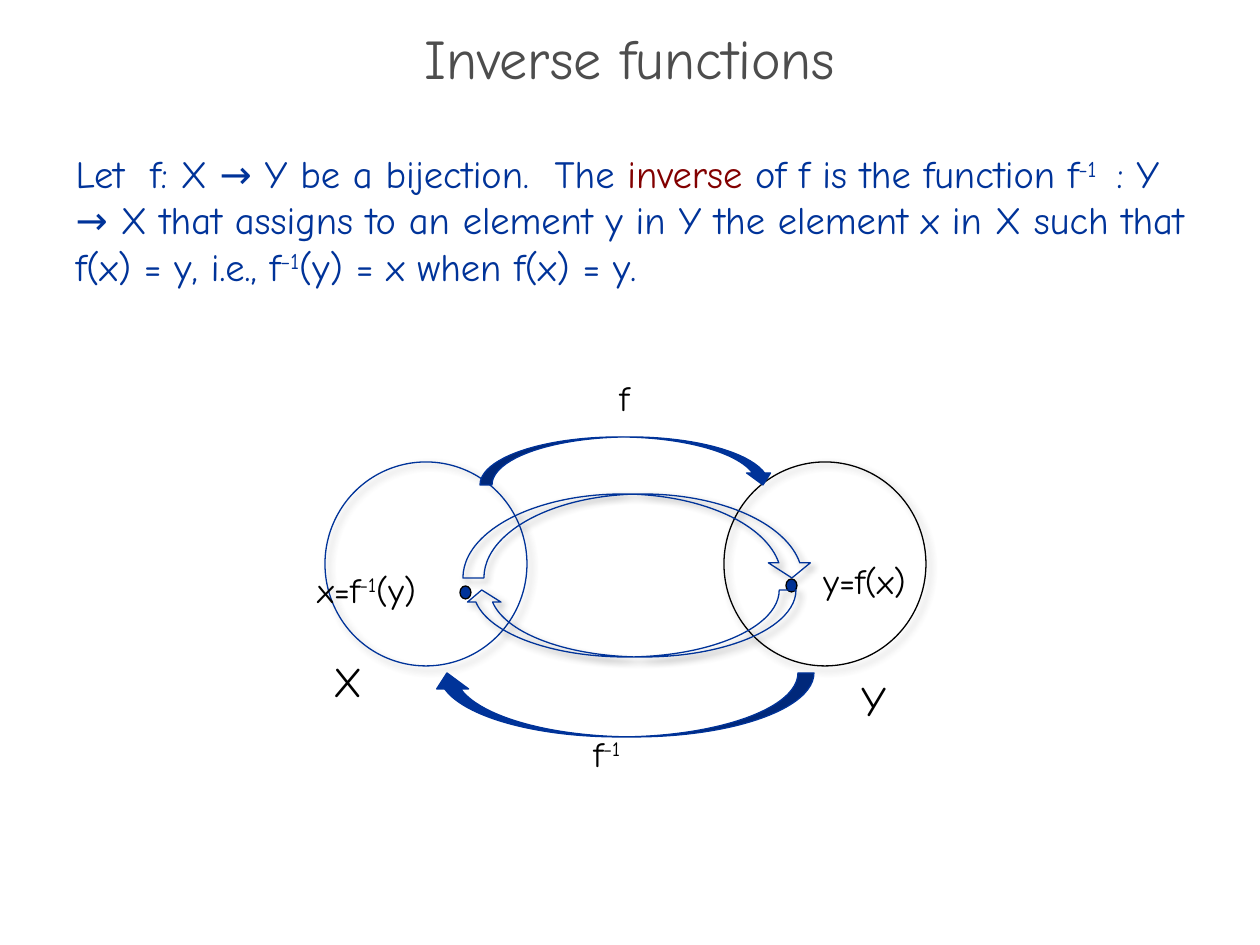
from lxml import etree
from pptx import Presentation
from pptx.dml.color import RGBColor
from pptx.enum.shapes import MSO_SHAPE
from pptx.enum.text import MSO_ANCHOR, MSO_AUTO_SIZE, PP_ALIGN
from pptx.oxml import parse_xml
from pptx.oxml.ns import nsdecls, qn
from pptx.util import Emu, Pt

ELLIPSE = MSO_SHAPE.OVAL
ARC = MSO_SHAPE.CURVED_DOWN_ARROW
SCALE = 914400 / 126  # EMU per px
FONT = "Comic Neue"
COLORS = {"blue": "003399", "red": "820000", "grey": "4D4D4D",
          "black": "000000", "shade": "4C4C4C"}

# Content: runs are (text, color, superscript)
TITLE = [("Inverse functions", "grey", False)]
DEFINITION = [
    ("Let  f: X → Y be a bijection.  The ", "blue", False),
    ("inverse", "red", False),
    (" of f is the function f", "blue", False),
    ("-1 ", "blue", True),
    (" : Y → X that assigns to an element y in Y the element x in X "
     "such that f(x) = y, i.e., f", "blue", False),
    ("−1", "blue", True),
    ("(y) = x when f(x) = y.", "blue", False),
]
TITLE_BOX = (0, 34, 1260, 63)
DEFINITION_BOX = (63, 144, 1134, 624)

# Shapes: kind, box, fill, line, shadow, flipped, adjustments
SETS = [
    (ELLIPSE, (325, 462, 202, 204), None, "blue", "shade", False, ()),
    (ELLIPSE, (724, 462, 202, 204), None, "black", "shade", False, ()),
]
ELEMENTS = [
    (ELLIPSE, (786, 579, 11, 13), "blue", "black", None, False, ()),
    (ELLIPSE, (460, 586, 11, 13), "blue", "black", None, False, ()),
]
SET_MAPS = [
    (ARC, (480, 437, 295, 48), "blue", "blue", None, False, ()),
    (ARC, (431, 673, 383, 64), "blue", "blue", None, True, ()),
]
ELEMENT_MAPS = [
    (ARC, (463, 494, 350, 84), None, "blue", "black", False, (0.25, 0.5, 0.18)),
    (ARC, (465, 590, 331, 67), None, "blue", "black", True, (0.25, 0.5, 0.18)),
]

# Labels: box, size, runs
LABELS = [
    ((321, 649, 57, 63), 24, [("X", "black", False)]),
    ((849, 668, 53, 63), 24, [("Y", "black", False)]),
    ((607, 370, 43, 55), 20, [("f", "black", False)]),
    ((581, 726, 66, 55), 20, [("f", "black", False), ("−1", "black", True)]),
    ((305, 562, 147, 55), 20, [("x=f", "black", False), ("-1", "black", True),
                               ("(y)", "black", False)]),
    ((811, 553, 126, 55), 20, [("y=f(x)", "black", False)]),
]


def rgb(name):
    return RGBColor.from_string(COLORS[name])


def emu(box):
    return [Emu(round(px * SCALE)) for px in box]


def write(paragraph, runs, size):
    for text, color, superscript in runs:
        run = paragraph.add_run()
        run.text = text
        run.font.name = FONT
        run.font.size = Pt(size)
        run.font.color.rgb = rgb(color)
        if superscript:
            run.font._element.set("baseline", "30000")


def fill_placeholder(holder, box, runs, size):
    holder.left, holder.top, holder.width, holder.height = emu(box)
    frame = holder.text_frame
    frame.auto_size = MSO_AUTO_SIZE.NONE
    write(frame.paragraphs[0], runs, size)
    return frame


def add_shadow(shape, color):
    effects = parse_xml(
        f'<a:effectLst {nsdecls("a")}>'
        f'<a:outerShdw blurRad="{Pt(4)}" dist="{Pt(3)}" dir="2700000" rotWithShape="0">'
        f'<a:srgbClr val="{COLORS[color]}"><a:alpha val="43000"/></a:srgbClr>'
        '</a:outerShdw></a:effectLst>')
    properties = shape._element.spPr
    properties.replace(properties.find(qn("a:effectLst")), effects)


def draw(slide, kind, box, fill, line, shadow, flipped, adjustments):
    shape = slide.shapes.add_shape(kind, *emu(box))
    shape.line.color.rgb = rgb(line)
    shape.line.width = Pt(0.75)
    if fill:
        shape.fill.solid()
        shape.fill.fore_color.rgb = rgb(fill)
    else:
        shape.fill.background()
    shape.shadow.inherit = False
    if shadow:
        add_shadow(shape, shadow)
    if flipped:
        shape._element.spPr.xfrm.set("flipH", "1")
        shape._element.spPr.xfrm.set("flipV", "1")
    for index, value in enumerate(adjustments):
        shape.adjustments[index] = value


def main():
    deck = Presentation()
    deck.slide_width, deck.slide_height = emu((1260, 945))
    slide = deck.slides.add_slide(deck.slide_layouts[1])

    # Title
    heading = fill_placeholder(slide.shapes.title, TITLE_BOX, TITLE, 32)
    heading.vertical_anchor = MSO_ANCHOR.MIDDLE
    heading.paragraphs[0].alignment = PP_ALIGN.CENTER
    heading.paragraphs[0].line_spacing = 0.7

    # Definition, without a bullet
    body = fill_placeholder(slide.placeholders[1], DEFINITION_BOX, DEFINITION, 22)
    definition = body.paragraphs[0]
    definition.space_before = Pt(0)
    definition.space_after = Pt(6)
    properties = definition._p.get_or_add_pPr()
    properties.set("marL", "0")
    properties.set("indent", "0")
    etree.SubElement(properties, qn("a:buNone"))

    # Diagram
    for item in SETS + SET_MAPS + ELEMENTS:
        draw(slide, *item)
    for box, size, runs in LABELS:
        frame = slide.shapes.add_textbox(*emu(box)).text_frame
        frame.word_wrap = False
        frame.auto_size = MSO_AUTO_SIZE.SHAPE_TO_FIT_TEXT
        write(frame.paragraphs[0], runs, size)
    for item in ELEMENT_MAPS:
        draw(slide, *item)

    deck.save("out.pptx")


if __name__ == "__main__":
    main()
